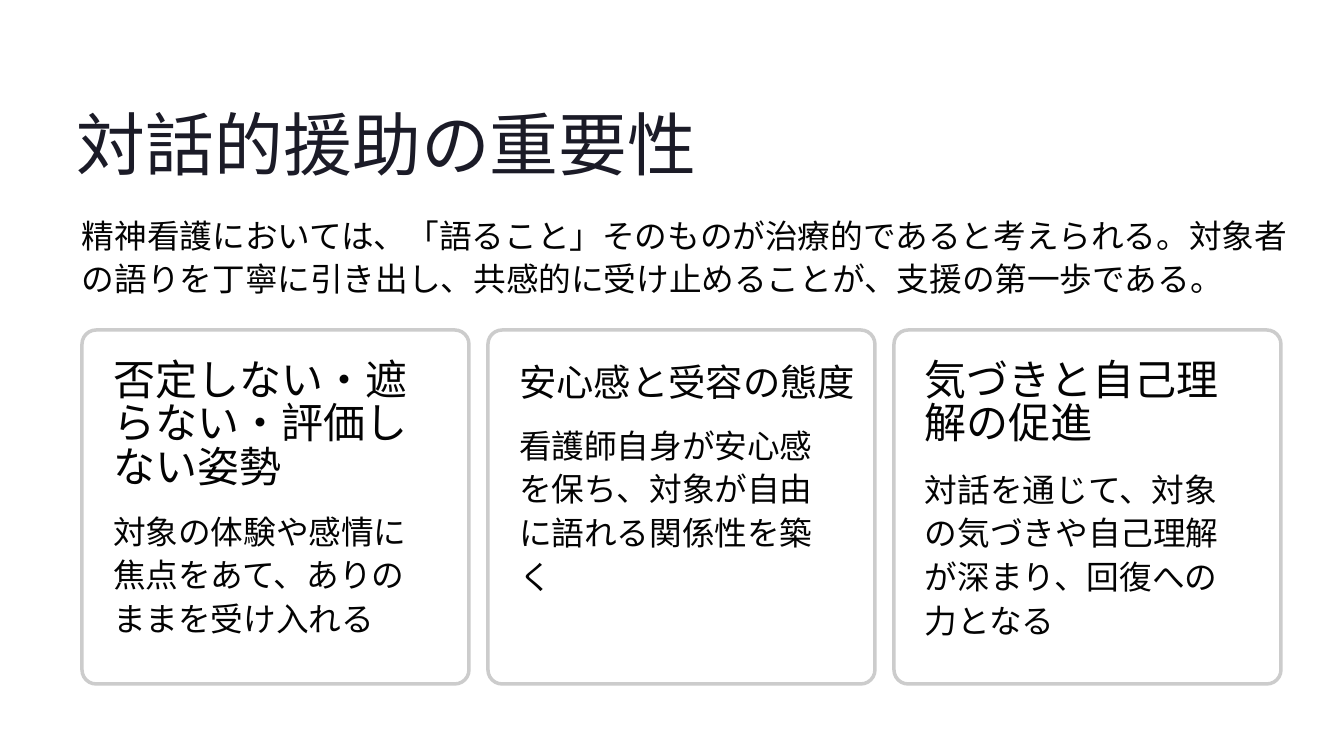
"""Builds a slide on dialogic support: a title, an introduction and three cards."""
from lxml import etree
from pptx import Presentation
from pptx.dml.color import RGBColor
from pptx.enum.shapes import MSO_SHAPE
from pptx.oxml.ns import qn
from pptx.util import Pt

COLORS = {"title": "1B1B27", "text": "030303", "card": "FFFFFF", "border": "CCCCCC"}
EMU_PER_PX = 914400 / 84


def px(*lengths):
    return [round(length * EMU_PER_PX) for length in lengths]


def add_text(box, text, font, size, spacing, color="text"):
    frame = slide.shapes.add_textbox(*px(*box)).text_frame
    frame.margin_left = frame.margin_top = frame.margin_right = frame.margin_bottom = 0
    frame.word_wrap = True
    frame.text = text
    paragraph = frame.paragraphs[0]
    paragraph.line_spacing = Pt(spacing)
    run_font = paragraph.runs[0].font
    run_font.name = font
    run_font.size = Pt(size)
    run_font.color.rgb = RGBColor.from_string(COLORS[color])


prs = Presentation()
prs.slide_width, prs.slide_height = px(1344, 756)
slide = prs.slides.add_slide(prs.slide_layouts[6])

add_text((77, 98, 691, 87), "対話的援助の重要性", "Inter", 59, 74, "title")
add_text(
    (82, 211, 1218, 105),
    "精神看護においては、「語ること」そのものが治療的であると考えられる。"
    "対象者の語りを丁寧に引き出し、共感的に受け止めることが、支援の第一歩である。",
    "Cabin", 28, 37.5,
)

CARD_LEFT, CARD_TOP, CARD_WIDTH, CARD_HEIGHT = 82, 330, 387, 354
CARD_STEP, PADDING, BODY_WIDTH = 406, 31, 323
cards = [
    ("否定しない・遮らない・評価しない姿勢", 36, 323, 102, 507,
     "対象の体験や感情に焦点をあて、ありのままを受け入れる"),
    ("安心感と受容の態度", 32, 348, 51, 421,
     "看護師自身が安心感を保ち、対象が自由に語れる関係性を築く"),
    ("気づきと自己理解の促進", 36, 323, 102, 465,
     "対話を通じて、対象の気づきや自己理解が深まり、回復への力となる"),
]

for index, (heading, size, heading_width, heading_height, body_top, body) in enumerate(cards):
    left = CARD_LEFT + index * CARD_STEP
    card = slide.shapes.add_shape(
        MSO_SHAPE.ROUNDED_RECTANGLE, *px(left, CARD_TOP, CARD_WIDTH, CARD_HEIGHT))
    card.adjustments[0] = 0.04
    card.shadow.inherit = False
    card.fill.solid()
    card.fill.fore_color.rgb = RGBColor.from_string(COLORS["card"])
    fill_color = card.fill._xPr.find(qn("a:solidFill"))[0]
    etree.SubElement(fill_color, qn("a:alpha")).set("val", "95000")
    card.line.color.rgb = RGBColor.from_string(COLORS["border"])
    card.line.width = Pt(3)

    text_left = left + PADDING
    add_text((text_left, 361, heading_width, heading_height), heading, "Inter", size, 37)
    add_text((text_left, body_top, BODY_WIDTH, 158), body, "Cabin", 28, 37.5)

prs.save("out.pptx")
